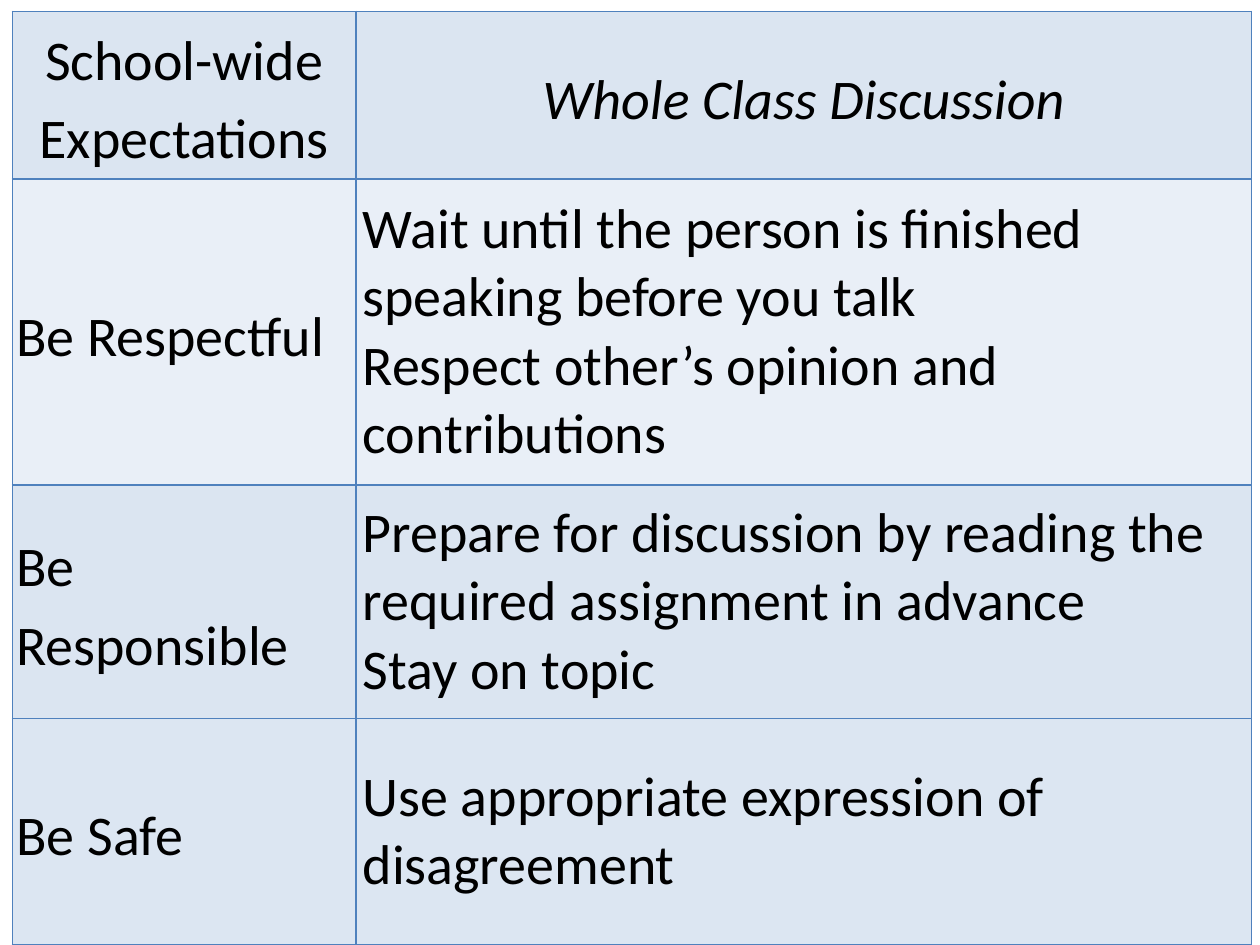
import pptx
import pptx.util
import pptx.dml.color
import pptx.enum.text
import pptx.oxml.ns
import lxml.etree

Cm, Pt = pptx.util.Cm, pptx.util.Pt
ALIGN = pptx.enum.text.PP_ALIGN

HUES = {"text": "000000", "line": "4F81BD", "blue": "4F81BD",
        "pale": "95B3D7", "safe": "DCE6F2"}
FONT, SIZE = "Calibri", 32

# expectation, what it looks like, row height in cm, fill, fill opacity in %
ROWS = [
    ("School-wide Expectations", ["Whole Class Discussion"], 3.38, "blue", 20),
    ("Be Respectful",
     ["Wait until the person is finished speaking before you talk",
      "Respect other’s opinion and contributions"], 6.17, "pale", 20),
    ("Be Responsible",
     ["Prepare for discussion by reading the required assignment in advance",
      "Stay on topic"], 4.7, "blue", 20),
    ("Be Safe", ["Use appropriate expression of disagreement"], 4.57, "safe", 100),
]
COLS = [6.93, 18.05]
LEFT, TOP = 0.25, 0.23


def hue(name):
    return pptx.dml.color.RGBColor.from_string(HUES[name])


def node(up, tag, **attrs):
    return lxml.etree.SubElement(up, pptx.oxml.ns.qn(tag), **attrs)


def edge(cell):
    """Draw a thin line on all four sides; must come before the fill."""
    props = cell._tc.get_or_add_tcPr()
    for side in "LRTB":
        line = node(props, "a:ln" + side, w=str(Pt(1)))
        node(node(line, "a:solidFill"), "a:srgbClr", val=HUES["line"])


def tint(cell, name, part):
    cell.fill.solid()
    cell.fill.fore_color.rgb = hue(name)
    if part < 100:
        tone = cell._tc.tcPr.find(".//" + pptx.oxml.ns.qn("a:solidFill")
                                  + "[last()]")
        tone = cell._tc.tcPr.find(pptx.oxml.ns.qn("a:solidFill"))[0]
        node(tone, "a:alpha", val=str(part * 1000))


def write(cell, lines, head, label):
    """Fill a cell; the head row and the label column are set more openly."""
    wide = head or label
    cell.vertical_anchor = pptx.enum.text.MSO_ANCHOR.MIDDLE
    cell.margin_left = cell.margin_right = Cm(0.08 if wide else 0.13)
    cell.margin_top = cell.margin_bottom = Cm(0 if wide else 0.13)
    frame = cell.text_frame
    for i, line in enumerate(lines):
        para = frame.add_paragraph() if i else frame.paragraphs[0]
        para.alignment = ALIGN.CENTER if head else ALIGN.LEFT
        para.line_spacing = 1.15 if wide else 1.0
        run = para.add_run()
        run.text = line
        font = run.font
        font.name, font.size = FONT, Pt(SIZE)
        font.bold, font.italic = False, head and not label
        font.color.rgb = hue("text")


def main():
    deck = pptx.Presentation()
    deck.slide_width, deck.slide_height = Cm(25.4), Cm(19.05)
    slide = deck.slides.add_slide(deck.slide_layouts[6])
    high = sum(row[2] for row in ROWS)
    table = slide.shapes.add_table(len(ROWS), len(COLS), Cm(LEFT), Cm(TOP),
                                   Cm(sum(COLS)), Cm(high)).table
    table.first_row = table.horz_banding = False
    for col, width in zip(table.columns, COLS):
        col.width = Cm(width)
    for r, (label, lines, height, fill, part) in enumerate(ROWS):
        table.rows[r].height = Cm(height)
        for c, text in enumerate(([label], lines)):
            cell = table.cell(r, c)
            edge(cell)
            tint(cell, fill, part)
            write(cell, text, r == 0, c == 0)
    deck.save("out.pptx")


if __name__ == "__main__":
    main()
